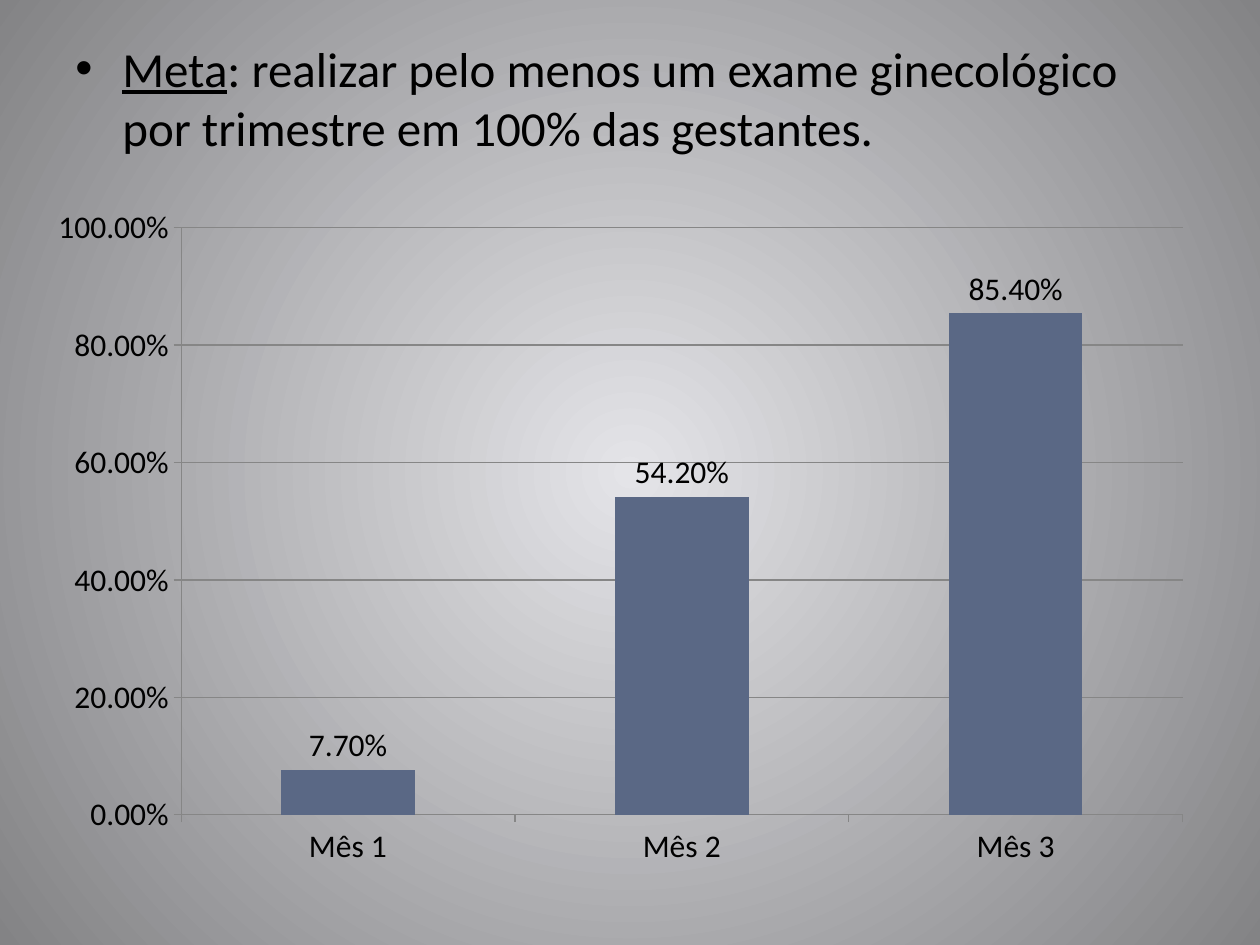
from lxml import etree
from pptx import Presentation
from pptx.chart.data import CategoryChartData
from pptx.dml.color import RGBColor
from pptx.enum.chart import XL_CHART_TYPE, XL_LABEL_POSITION as LabelPosition, XL_TICK_MARK as TickMark
from pptx.oxml import parse_xml
from pptx.oxml.ns import nsdecls, qn
from pptx.util import Pt

EMU_PER_PX = 914400 / 126
FONT = "Calibri"
BLACK = RGBColor(0x00, 0x00, 0x00)
LIGHT = RGBColor(0xE4, 0xE4, 0xE8)
DARK = RGBColor(0x83, 0x83, 0x85)
GRID_GRAY = RGBColor(0x86, 0x86, 0x86)
BAR_BLUE = RGBColor(0x5A, 0x68, 0x85)
PERCENT = "0.00%"


def px(length):
    return round(length * EMU_PER_PX)


def box(*lengths):
    return [px(length) for length in lengths]


def set_radial_background(slide, center, edge):
    fill = slide.background.fill
    fill.gradient()
    for stop, color in zip(fill.gradient_stops, (center, edge)):
        stop.color.rgb = color
    gradient = slide.element.find(".//" + qn("a:gradFill"))
    gradient.replace(gradient.find(qn("a:lin")), parse_xml(
        f'<a:path {nsdecls("a")} path="circle">'
        '<a:fillToRect l="50000" t="50000" r="50000" b="50000"/></a:path>'))


def format_font(font, size, color=BLACK, underline=None):
    font.name, font.size, font.underline = FONT, Pt(size), underline
    font.color.rgb = color


def add_bullet(paragraph, indent):
    properties = paragraph._p.get_or_add_pPr()
    properties.set("marL", str(px(indent)))
    properties.set("indent", str(px(-indent)))
    etree.SubElement(properties, qn("a:buFont"), typeface="Arial")
    etree.SubElement(properties, qn("a:buChar"), char="•")


def add_text(slide, position, runs, size, indent, space_before):
    """Add one bulleted paragraph; runs are (text, underline) pairs."""
    frame = slide.shapes.add_textbox(*box(*position)).text_frame
    frame.word_wrap = True
    paragraph = frame.paragraphs[0]
    paragraph.space_before = Pt(space_before)
    add_bullet(paragraph, indent)
    for text, underline in runs:
        run = paragraph.add_run()
        run.text = text
        format_font(run.font, size, underline=underline)


def format_axis(axis):
    axis.major_tick_mark = TickMark.OUTSIDE
    axis.minor_tick_mark = TickMark.NONE
    axis.format.line.color.rgb = GRID_GRAY
    axis.format.line.width = Pt(0.75)


def add_column_chart(slide, position, categories, values):
    data = CategoryChartData(number_format=PERCENT)
    data.categories = categories
    data.add_series("Series 1", values)
    chart = slide.shapes.add_chart(
        XL_CHART_TYPE.COLUMN_CLUSTERED, *box(*position), data).chart
    chart.has_title = False
    chart.has_legend = False
    format_font(chart.font, 18)

    format_axis(chart.category_axis)
    value_axis = chart.value_axis
    format_axis(value_axis)
    value_axis.minimum_scale, value_axis.maximum_scale = 0, 1
    value_axis.major_unit = 0.2
    value_axis.tick_labels.number_format = PERCENT
    value_axis.tick_labels.number_format_is_linked = False
    grid_line = value_axis.major_gridlines.format.line
    grid_line.color.rgb = GRID_GRAY
    grid_line.width = Pt(0.75)

    plot = chart.plots[0]
    plot.gap_width = 150
    plot.vary_by_categories = False
    bars = plot.series[0].format
    bars.fill.solid()
    bars.fill.fore_color.rgb = BAR_BLUE
    plot.has_data_labels = True
    labels = plot.data_labels
    labels.show_value = True
    labels.number_format = PERCENT
    labels.number_format_is_linked = False
    labels.position = LabelPosition.OUTSIDE_END
    format_font(labels.font, 18)


def main():
    presentation = Presentation()
    presentation.slide_width, presentation.slide_height = box(1260, 945)
    slide = presentation.slides.add_slide(presentation.slide_layouts[6])
    set_radial_background(slide, LIGHT, DARK)
    goal = [
        ("Meta", True),
        (": realizar pelo menos um exame ginecológico por trimestre "
         "em 100% das gestantes.", False),
    ]
    add_text(slide, (63, 32, 1134, 699), goal, size=28, indent=47, space_before=5.6)
    add_column_chart(slide, (35, 195, 1171, 684),
                     ["Mês 1", "Mês 2", "Mês 3"], [0.077, 0.542, 0.854])
    presentation.save("out.pptx")


if __name__ == "__main__":
    main()
